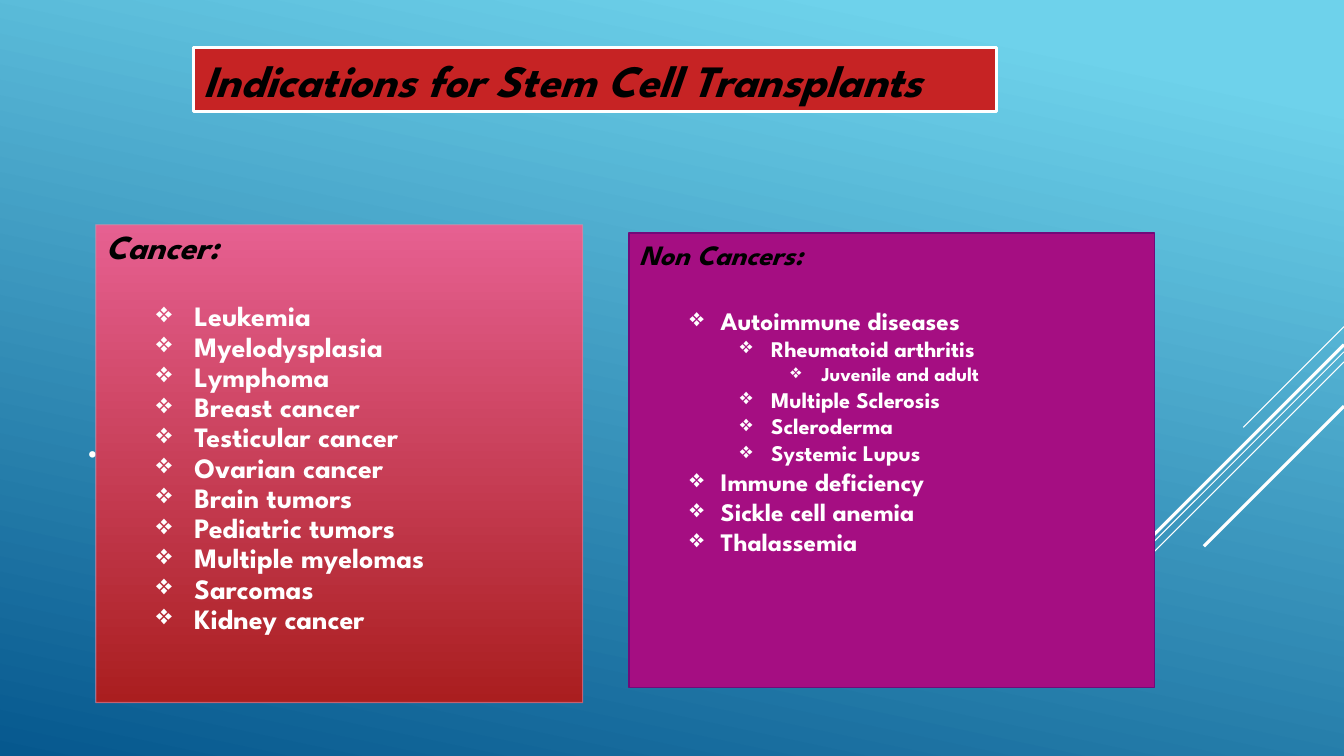
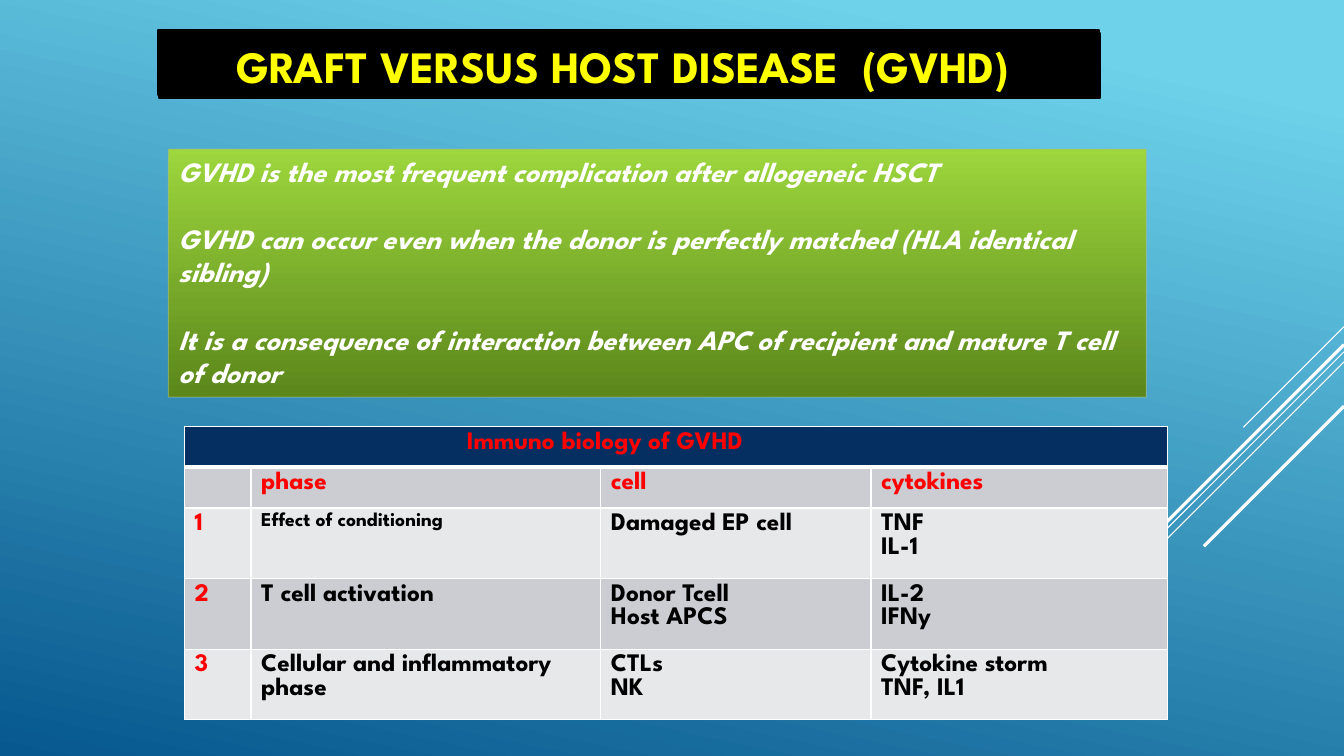
from dataclasses import dataclass

from lxml.etree import SubElement
from pptx import Presentation
from pptx.dml.color import RGBColor
from pptx.enum.shapes import MSO_CONNECTOR, MSO_SHAPE
from pptx.enum.text import MSO_ANCHOR as ANCHOR, PP_ALIGN as ALIGN
from pptx.oxml.ns import qn
from pptx.util import Inches, Pt


@dataclass(frozen=True)
class Theme:
    font: str = "League Spartan"
    white: str = "FFFFFF"
    black: str = "000000"
    red: str = "FF0000"
    yellow: str = "FFFF00"
    sky: tuple = ("6ED2EB", "06588E")
    title_red: str = "C62324"
    pink: tuple = ("E66091", "AA1E1F")
    pink_line: str = "D68BA6"
    purple: str = "A50E82"
    purple_line: str = "710A7A"
    green: tuple = ("9DD63D", "5B871B")
    green_line: str = "A4BB8B"
    navy: str = "052F61"
    bands: tuple = ("CCCDD2", "E7E8EA")
    title: int = 32
    head: int = 24
    body: int = 20
    cell: int = 18
    small: int = 14
    leading: float = 1.2
    tight: float = 1.08
    table_leading: float = 0.92


@dataclass(frozen=True)
class Box:
    left: float
    top: float
    width: float
    height: float

    def emu(self) -> tuple:
        return tuple(Inches(v) for v in (self.left, self.top, self.width, self.height))


@dataclass(frozen=True)
class Ray:
    """A diagonal at 45 degrees from the right edge of the slide."""
    top: float
    run: float
    weight: float


@dataclass(frozen=True)
class Item:
    text: str
    level: int = 1


T = Theme()
WIDTH, HEIGHT = 13.33, 7.5
RAYS = (Ray(3.24, 1, 0.75), Ray(3.49, 3.26, 0.75), Ray(3.59, 2.07, 0.75),
        Ray(3.42, 1.91, 2.25), Ray(4.03, 1.39, 2.25))

CANCERS = [Item(s) for s in (
    "Leukemia", "Myelodysplasia", "Lymphoma", "Breast cancer",
    "Testicular cancer", "Ovarian cancer", "Brain tumors",
    "Pediatric tumors", "Multiple myelomas", "Sarcomas", "Kidney cancer")]
NON_CANCERS = [
    Item("Autoimmune diseases"), Item("Rheumatoid arthritis", 2),
    Item("Juvenile and adult", 3), Item("Multiple Sclerosis", 2),
    Item("Scleroderma", 2), Item("Systemic Lupus", 2),
    Item("Immune deficiency"), Item("Sickle cell anemia"), Item("Thalassemia")]
GVHD_FACTS = (
    "GVHD is the most frequent complication after allogeneic HSCT",
    "GVHD can occur even when the donor is perfectly matched (HLA identical sibling)",
    "It is a consequence of interaction between APC of recipient and mature T cell of donor")
PHASES = (
    ("", "phase", "cell", "cytokines"),
    ("1", "Effect of conditioning", "Damaged EP cell", "TNF\nIL-1"),
    ("2", "T cell activation", "Donor Tcell\nHost APCS", "IL-2\nIFNy"),
    ("3", "Cellular and inflammatory phase", "CTLs\nNK", "Cytokine storm\nTNF, IL1"))


def rgb(color: str) -> RGBColor:
    return RGBColor.from_string(color)


# Text
def add_text(tf, text: str, *, size: float, color: str = T.white, bold: bool = True,
             italic: bool = False, align=ALIGN.LEFT, leading: float = T.leading,
             before: float = 0, indent: float = 0, hang: float = 0) -> None:
    """Add a paragraph; a hanging indent also gives it a bullet."""
    p = tf.paragraphs[0] if not tf.paragraphs[0].runs else tf.add_paragraph()
    p.alignment = align
    p.line_spacing = Pt(round(size * leading, 1))
    p.space_before = Pt(before)
    r = p.add_run()
    r.text = text
    f = r.font
    f.name, f.size, f.bold, f.italic = T.font, Pt(size), bold, italic
    f.color.rgb = rgb(color)
    if hang:
        pPr = p._p.get_or_add_pPr()
        pPr.set("marL", str(Inches(indent)))
        pPr.set("indent", str(-Inches(hang)))
        SubElement(pPr, qn("a:buChar")).set("char", "❖")


def add_items(tf, items: list, *, sizes: dict, hang: float, gap: float,
              leading: float = T.leading) -> None:
    for i, item in enumerate(items):
        add_text(tf, item.text, size=sizes[item.level], leading=leading,
                 before=0 if i else gap, indent=item.level * 0.5 + hang, hang=hang)


# Shapes
def set_gradient(fill, colors: tuple, angle: float, start: float = 0) -> None:
    fill.gradient()
    fill.gradient_angle = 360 - angle
    for stop, color, pos in zip(fill.gradient_stops, colors, (start, 1)):
        stop.color.rgb = rgb(color)
        stop.position = pos


def add_panel(slide, box: Box, fill: str | tuple, line: str, weight: float,
              alpha: int = 100, anchor=ANCHOR.TOP):
    """Draw a rectangle and return its text frame."""
    sp = slide.shapes.add_shape(MSO_SHAPE.RECTANGLE, *box.emu())
    sp.shadow.inherit = False
    if isinstance(fill, tuple):
        set_gradient(sp.fill, fill, 90)
    else:
        sp.fill.solid()
        sp.fill.fore_color.rgb = rgb(fill)
    sp.line.color.rgb = rgb(line)
    sp.line.width = Pt(weight)
    if alpha < 100:
        clr = sp.line._ln.find(".//" + qn("a:srgbClr"))
        SubElement(clr, qn("a:alpha")).set("val", str(alpha * 1000))
    tf = sp.text_frame
    tf.word_wrap = True
    tf.vertical_anchor = anchor
    return tf


def add_slide(prs):
    """Add a blank slide with the diagonals at the right edge."""
    slide = prs.slides.add_slide(prs.slide_layouts[6])
    for ray in RAYS:
        ends = (WIDTH, ray.top, WIDTH - ray.run, ray.top + ray.run)
        line = slide.shapes.add_connector(MSO_CONNECTOR.STRAIGHT, *map(Inches, ends))
        line.line.color.rgb = rgb(T.white)
        line.line.width = Pt(ray.weight)
        SubElement(line._element.spPr, qn("a:effectLst"))
    return slide


# Table
def style_cell(cell, fill: str, bottom: float = 1) -> None:
    tcPr = cell._tc.get_or_add_tcPr()
    for side, weight in (("L", 1), ("R", 1), ("T", 1), ("B", bottom)):
        ln = SubElement(tcPr, qn(f"a:ln{side}"), w=str(Pt(weight)))
        solid = SubElement(ln, qn("a:solidFill"))
        SubElement(solid, qn("a:srgbClr"), val=T.white)
    cell.fill.solid()
    cell.fill.fore_color.rgb = rgb(fill)


def add_phase_table(slide, box: Box, widths: tuple, heights: tuple) -> None:
    table = slide.shapes.add_table(len(heights), len(widths), *box.emu()).table
    for col, width in zip(table.columns, widths):
        col.width = Inches(width)
    for row, height in zip(table.rows, heights):
        row.height = Inches(height)

    # Heading across all columns
    for cell in table.rows[0].cells:
        style_cell(cell, T.navy, bottom=3)
    heading = table.cell(0, 0)
    heading.merge(table.cell(0, len(widths) - 1))
    heading.margin_left = Inches(2.8)
    add_text(heading.text_frame, "Immuno biology of GVHD", size=T.cell,
             color=T.red, leading=T.table_leading)

    # Column names and phases
    for i, texts in enumerate(PHASES):
        for j, text in enumerate(texts):
            cell = table.cell(i + 1, j)
            style_cell(cell, T.bands[i % 2])
            if not text:
                continue
            for part in text.split("\n"):
                add_text(cell.text_frame, part,
                         size=T.small if (i, j) == (1, 1) else T.cell,
                         color=T.red if i == 0 or j == 0 else T.black,
                         leading=T.table_leading)


# Slides
def build_indications(prs) -> None:
    slide = add_slide(prs)
    dot = slide.shapes.add_textbox(*Box(0.75, 3.38, 9.33, 1.31).emu()).text_frame
    dot.word_wrap = True
    dot.vertical_anchor = ANCHOR.BOTTOM
    add_text(dot, ".", size=36, bold=False)

    title = add_panel(slide, Box(1.92, 0.47, 7.96, 0.64), T.title_red, T.white, 2.25)
    add_text(title, "Indications for Stem Cell Transplants", size=T.title,
             color=T.black, italic=True)

    cancer = add_panel(slide, Box(0.95, 2.23, 4.83, 4.74), T.pink, T.pink_line, 0.75, 60)
    add_text(cancer, "Cancer:", size=T.head, color=T.black, italic=True, leading=T.tight)
    add_items(cancer, CANCERS, sizes={1: T.body}, hang=0.38,
              gap=T.head * T.tight, leading=T.tight)

    other = add_panel(slide, Box(6.24, 2.31, 5.21, 4.51), T.purple, T.purple_line, 1.25)
    add_text(other, "Non Cancers:", size=T.body, color=T.black, italic=True)
    add_items(other, NON_CANCERS, sizes={1: 18, 2: 16, 3: 14}, hang=0.31,
              gap=T.body * T.leading)


def build_gvhd(prs) -> None:
    slide = add_slide(prs)
    add_panel(slide, Box(1.57, 0.3, 9.33, 0.64), T.black, T.black, 1.25)

    facts = add_panel(slide, Box(1.67, 1.48, 9.7, 2.46), T.green, T.green_line, 0.75, 60)
    for i, fact in enumerate(GVHD_FACTS):
        add_text(facts, fact, size=T.body, italic=True,
                 before=T.body * T.leading if i else 0)

    add_phase_table(slide, Box(1.83, 4.23, 8.89, 2.91),
                    widths=(0.66, 3.47, 2.68, 2.08), heights=(0.4, 0.41, 0.7, 0.7, 0.7))

    title = add_panel(slide, Box(1.58, 0.33, 9.33, 0.64), T.black, T.black, 1.25,
                      anchor=ANCHOR.BOTTOM)
    add_text(title, "GRAFT VERSUS HOST DISEASE  (GVHD) ", size=T.title,
             color=T.yellow, align=ALIGN.CENTER)


def main() -> None:
    prs = Presentation()
    prs.slide_width, prs.slide_height = Inches(WIDTH), Inches(HEIGHT)
    set_gradient(prs.slide_master.background.fill, T.sky, 102, start=0.1)
    build_indications(prs)
    build_gvhd(prs)
    prs.save("out.pptx")


if __name__ == "__main__":
    main()
